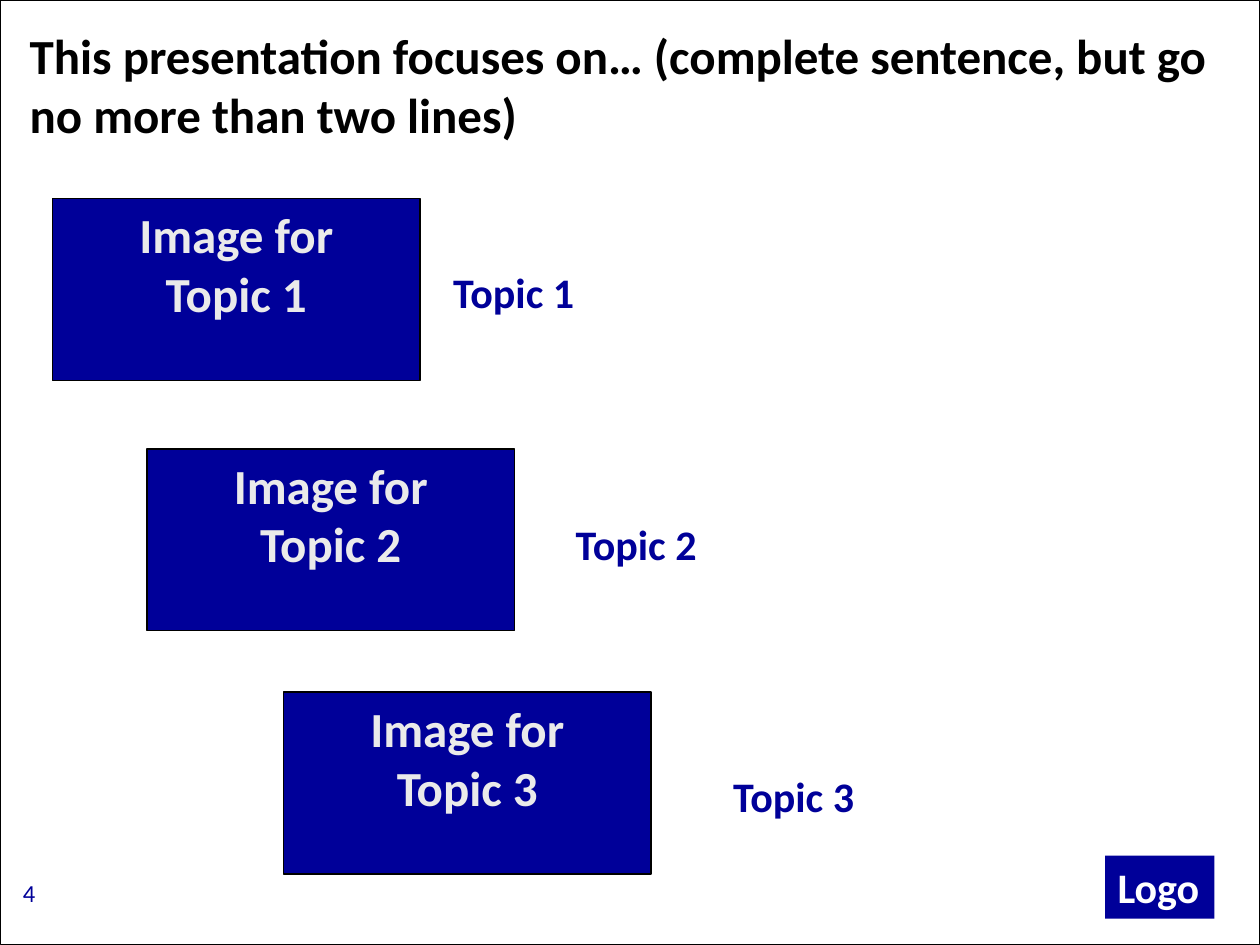
from pptx import Presentation
from pptx.dml.color import RGBColor
from pptx.enum.shapes import MSO_SHAPE
from pptx.enum.text import MSO_ANCHOR, PP_ALIGN
from pptx.util import Pt

NAVY = RGBColor(0x00, 0x00, 0x99)
BLACK = RGBColor(0x00, 0x00, 0x00)
PALE = RGBColor(0xEA, 0xEA, 0xEA)
WHITE = RGBColor(0xFF, 0xFF, 0xFF)


def add_run(paragraph, text, size, color, bold=True, align=PP_ALIGN.LEFT):
    paragraph.alignment = align
    run = paragraph.add_run()
    run.text = text
    run.font.name = "Calibri"
    run.font.size = Pt(size)
    run.font.bold = bold
    run.font.color.rgb = color


def set_frame(frame, side=7.2, edge=3.6, wrap=True):
    """Anchor text at the top with the given side and top/bottom insets."""
    frame.word_wrap = wrap
    frame.vertical_anchor = MSO_ANCHOR.TOP
    frame.margin_left = frame.margin_right = Pt(side)
    frame.margin_top = frame.margin_bottom = Pt(edge)


prs = Presentation()
prs.slide_width, prs.slide_height = Pt(720), Pt(540)
slide = prs.slides.add_slide(prs.slide_layouts[5])
shapes = slide.shapes

# Slide border and page number
border = shapes.add_shape(MSO_SHAPE.RECTANGLE, 0, 0, prs.slide_width, prs.slide_height)
border.shadow.inherit = False
border.fill.background()
border.line.color.rgb = BLACK
border.line.width = Pt(0.5)

page_number = shapes.add_textbox(Pt(6), Pt(498), Pt(150), Pt(36)).text_frame
set_frame(page_number)
add_run(page_number.paragraphs[0], "4", 14, NAVY, bold=False)

# Title
title = shapes.title
title.left, title.top, title.width, title.height = Pt(12), Pt(12), Pt(690), Pt(71.5)
set_frame(title.text_frame, 5, 2.4)
add_run(
    title.text_frame.paragraphs[0],
    "This presentation focuses on… (complete sentence, but go no more than two lines)",
    28, BLACK,
)

# Topics: image left, image top, label left
topics = [(30, 113.5, 254), (84, 256.5, 324), (162, 395.5, 414)]
for number, (image_left, image_top, label_left) in enumerate(topics, start=1):
    topic = f"Topic {number}"

    label_top = 150 + 144 * (number - 1)
    label = shapes.add_textbox(Pt(label_left), Pt(label_top), Pt(94), Pt(33)).text_frame
    set_frame(label, 5, 2.4)
    add_run(label.paragraphs[0], topic, 24, NAVY)

    image = shapes.add_shape(
        MSO_SHAPE.RECTANGLE, Pt(image_left), Pt(image_top), Pt(210), Pt(104)
    )
    image.shadow.inherit = False
    image.fill.solid()
    image.fill.fore_color.rgb = NAVY
    image.line.color.rgb = BLACK
    image.line.width = Pt(0.75)
    caption = image.text_frame
    set_frame(caption)
    add_run(caption.paragraphs[0], "Image for", 28, PALE, align=PP_ALIGN.CENTER)
    add_run(caption.add_paragraph(), topic, 28, PALE, align=PP_ALIGN.CENTER)

# Logo placeholder block
logo = shapes.add_shape(MSO_SHAPE.RECTANGLE, Pt(631.5), Pt(489), Pt(62.5), Pt(36))
logo.shadow.inherit = False
logo.fill.solid()
logo.fill.fore_color.rgb = NAVY
logo.line.fill.background()
set_frame(logo.text_frame, wrap=False)
add_run(logo.text_frame.paragraphs[0], "Logo", 24, WHITE)

prs.save("out.pptx")
